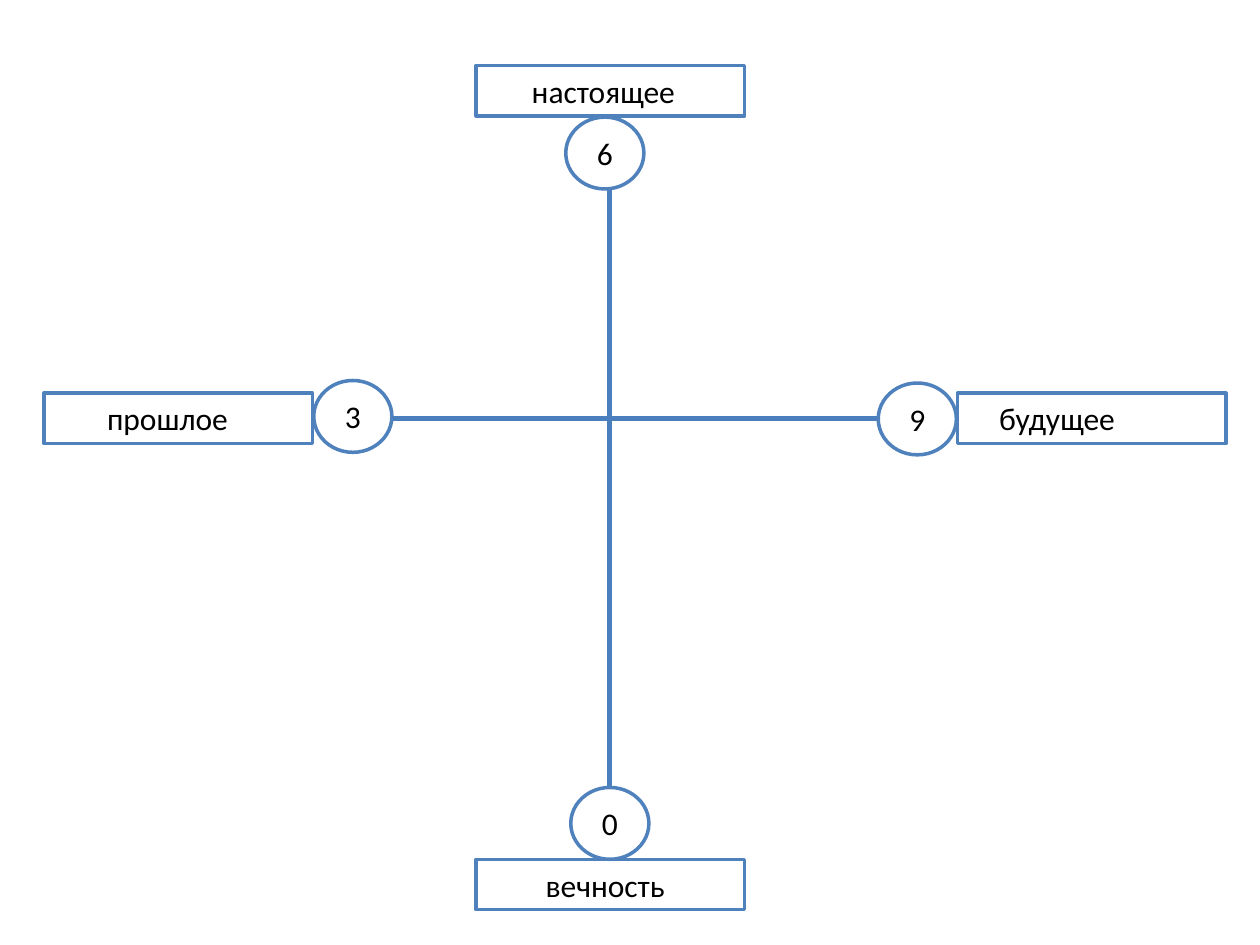
from dataclasses import dataclass

from lxml.etree import SubElement
from pptx import Presentation
from pptx.dml.color import RGBColor
from pptx.enum.shapes import MSO_CONNECTOR, MSO_SHAPE
from pptx.enum.text import MSO_ANCHOR, PP_ALIGN
from pptx.oxml.ns import qn
from pptx.util import Inches, Pt


@dataclass(frozen=True)
class Theme:
    paper: RGBColor = RGBColor(0xFF, 0xFF, 0xFF)
    ink: RGBColor = RGBColor(0, 0, 0)
    outline: RGBColor = RGBColor(0x4F, 0x81, 0xBD)
    axis: RGBColor = RGBColor(0x4B, 0x7E, 0xBC)
    font: str = "Calibri"
    text_size: int = 18
    outline_width: int = 2
    axis_width: int = 3


THEME = Theme()

# Content: text, left, top, and the text's inset from the left edge
LABEL_SIZE = (2.13, 0.4)
LABELS = [
    ("настоящее", 3.78, 0.52, 0.44),
    ("будущее", 7.6, 3.12, 0.33),
    ("вечность", 3.78, 6.82, 0.55),
    ("прошлое", 0.35, 3.12, 0.5),
]

# Clock marks: text, left, top
MARK_SIZE = (0.62, 0.57)
MARKS = [("9", 6.97, 3.04), ("6", 4.49, 0.93), ("3", 2.49, 3.02), ("0", 4.53, 6.25)]

# Axes run between the inner edges of opposite labels
CENTER_X, CENTER_Y = 4.84, 3.32
AXES = [(CENTER_X, 0.93, CENTER_X, 6.82), (2.48, CENTER_Y, 7.6, CENTER_Y)]


def add_text_shape(slide, text, kind, box, align=PP_ALIGN.LEFT, inset=0.1):
    shape = slide.shapes.add_shape(kind, *map(Inches, box))
    shape.shadow.inherit = False
    shape.fill.solid()
    shape.fill.fore_color.rgb = THEME.paper
    shape.line.color.rgb = THEME.outline
    shape.line.width = Pt(THEME.outline_width)
    frame = shape.text_frame
    frame.word_wrap = True
    frame.vertical_anchor = MSO_ANCHOR.MIDDLE
    frame.margin_left = Inches(inset)
    paragraph = frame.paragraphs[0]
    paragraph.alignment = align
    run = paragraph.add_run()
    run.text = text
    run.font.name = THEME.font
    run.font.size = Pt(THEME.text_size)
    run.font.color.rgb = THEME.ink


def add_axis(slide, ends):
    axis = slide.shapes.add_connector(MSO_CONNECTOR.STRAIGHT, *map(Inches, ends))
    axis.line.color.rgb = THEME.axis
    axis.line.width = Pt(THEME.axis_width)
    SubElement(axis._element.spPr, qn("a:effectLst"))


def main():
    presentation = Presentation()
    presentation.slide_width = Inches(10)
    presentation.slide_height = Inches(7.5)
    slide = presentation.slides.add_slide(presentation.slide_layouts[6])

    # Labels at the four ends
    for text, left, top, inset in LABELS:
        add_text_shape(slide, text, MSO_SHAPE.RECTANGLE, (left, top, *LABEL_SIZE), inset=inset)

    # Crossing axes
    for ends in AXES:
        add_axis(slide, ends)

    # Numbered circles over the axis ends
    for text, left, top in MARKS:
        add_text_shape(slide, text, MSO_SHAPE.OVAL, (left, top, *MARK_SIZE), align=PP_ALIGN.CENTER)

    presentation.save("out.pptx")


if __name__ == "__main__":
    main()
